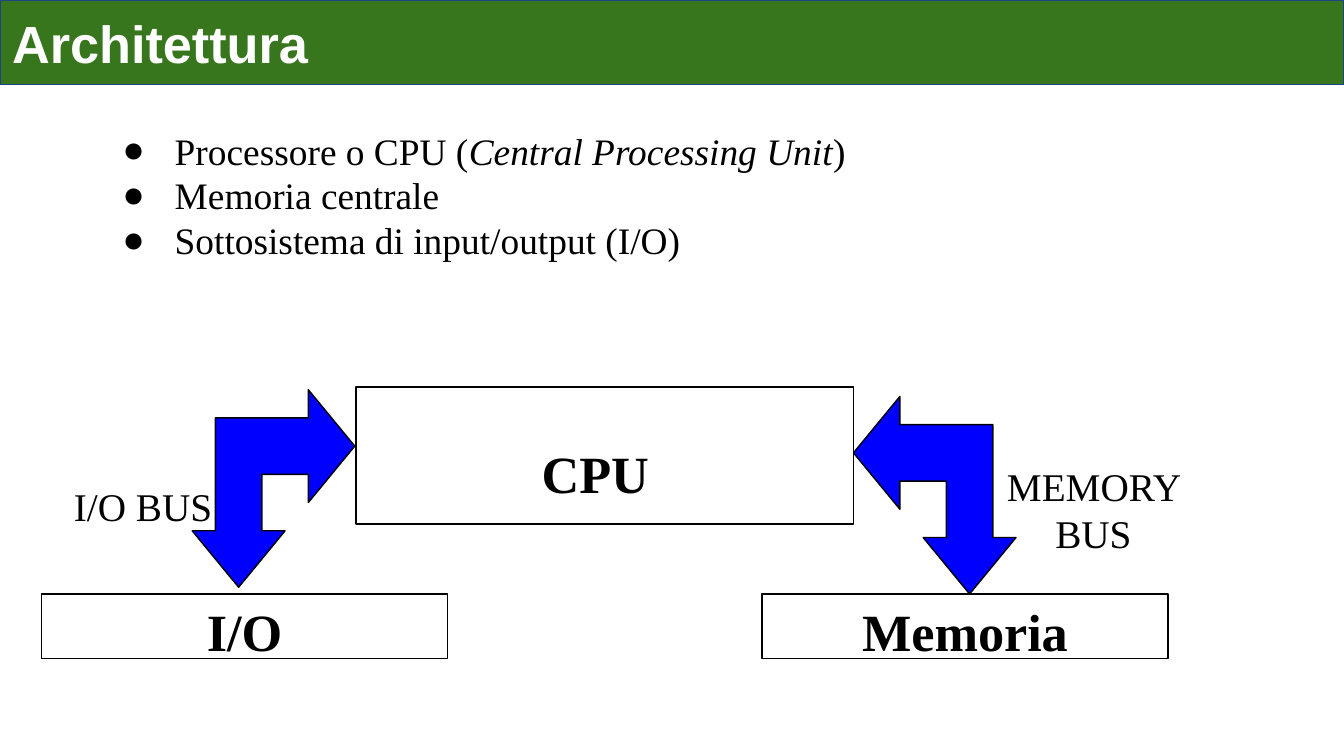
import pptx
import pptx.dml.color
import pptx.enum.shapes
import pptx.enum.text
import pptx.oxml.ns
import pptx.util
from lxml import etree

WIDTH = 10
HEIGHT = WIDTH * 9 / 16
SERIF, SANS = "Times New Roman", "Arial"
BLACK, WHITE, BLUE = "000000", "FFFFFF", "0000FF"
GREEN, NAVY = "38761D", "1C4587"
ALIGN = pptx.enum.text.PP_ALIGN
ANCHOR = pptx.enum.text.MSO_ANCHOR

# Double-headed elbow arrow, on a grid of 7 by 7 cells
ARROW_CELLS = 7
ELBOW = [(7, 2), (5, 4), (5, 3), (3, 3), (3, 5), (4, 5),
         (2, 7), (0, 5), (1, 5), (1, 1), (5, 1), (5, 0)]


def inches(*lengths):
    return [pptx.util.Inches(length) for length in lengths]


def color(hex_text):
    return pptx.dml.color.RGBColor.from_string(hex_text)


def set_all(target, values):
    for name, value in values.items():
        setattr(target, name, value)


def place(element, area):
    set_all(element, dict(zip(("left", "top", "width", "height"), inches(*area))))


def paint(shape, fill=None, line=BLACK):
    """Fill and outline a shape."""
    if fill:
        shape.fill.solid()
        shape.fill.fore_color.rgb = color(fill)
    else:
        shape.fill.background()
    shape.line.color.rgb = color(line)
    shape.line.width = pptx.util.Pt(0.75)


def set_frame(shape, side=0.09, edge=0.04, anchor=ANCHOR.TOP):
    """Fix insets, wrapping and anchor of a text frame."""
    side, edge = inches(side, edge)
    set_all(shape.text_frame, {
        "margin_left": side, "margin_right": side,
        "margin_top": edge, "margin_bottom": edge,
        "word_wrap": True, "vertical_anchor": anchor,
        "auto_size": pptx.enum.text.MSO_AUTO_SIZE.NONE})
    return shape.text_frame


def write(paragraph, text, size, font=SERIF, ink=BLACK, align=ALIGN.LEFT,
          bold=False, italic=False):
    paragraph.alignment = align
    run = paragraph.add_run()
    run.text = text
    set_all(run.font, {"name": font, "size": pptx.util.Pt(size),
                       "bold": bold, "italic": italic})
    run.font.color.rgb = color(ink)


def add_title(slide, text):
    banner = slide.shapes.title
    place(banner, (0, 0, WIDTH, 0.63))
    paint(banner, GREEN, NAVY)
    frame = set_frame(banner, side=0.09, edge=0, anchor=ANCHOR.MIDDLE)
    write(frame.paragraphs[0], text, 28, SANS, WHITE, bold=True)


def add_bullets(slide, items):
    """Each item is a list of (text, italic) parts."""
    components = slide.placeholders[1]
    place(components, (0.71, 0.91, 8.75, 1.52))
    frame = set_frame(components)
    indent, hanging = inches(0.5, -0.39)
    for index, parts in enumerate(items):
        paragraph = frame.add_paragraph() if index else frame.paragraphs[0]
        for text, italic in parts:
            write(paragraph, text, 20, italic=italic)
        set_all(paragraph, {"space_before": pptx.util.Pt(0),
                            "line_spacing": 1.0})
        properties = paragraph._p.get_or_add_pPr()
        properties.set("marL", str(indent))
        properties.set("indent", str(hanging))
        bullet = etree.SubElement(properties, pptx.oxml.ns.qn("a:buChar"))
        bullet.set("char", "●")


def add_unit(slide, area, text=None):
    """Outlined block of the architecture."""
    unit = slide.shapes.add_shape(
        pptx.enum.shapes.MSO_SHAPE.RECTANGLE, *inches(*area))
    unit.shadow.inherit = False
    paint(unit)
    if text:
        write(set_frame(unit).paragraphs[0], text, 28,
              align=ALIGN.CENTER, bold=True)


def add_label(slide, area, text, size=21, **style):
    label = slide.shapes.add_textbox(*inches(*area))
    write(set_frame(label).paragraphs[0], text, size, **style)


def add_bus(slide, left, top, mirrored=False):
    """Elbow arrow between the CPU and a lower block."""
    corners = [(ARROW_CELLS - x if mirrored else x, y) for x, y in ELBOW]
    cell = [length / ARROW_CELLS for length in inches(1.21, 1.47)]
    outline = slide.shapes.build_freeform(*corners[0], scale=tuple(cell))
    outline.add_line_segments(corners[1:], close=True)
    bus = outline.convert_to_shape(*inches(left, top))
    bus.shadow.inherit = False
    paint(bus, BLUE)


def main():
    deck = pptx.Presentation()
    deck.slide_width, deck.slide_height = inches(WIDTH, HEIGHT)
    slide = deck.slides.add_slide(deck.slide_layouts[1])

    # Title and list of components
    add_title(slide, "Architettura")
    add_bullets(slide, [
        [("Processore o CPU (", False), ("Central Processing Unit", True),
         (")", False)],
        [("Memoria centrale", False)],
        [("Sottosistema di input/output (I/O)", False)]])

    # Lower blocks
    for left, name in ((0.31, "I/O"), (5.67, "Memoria")):
        add_unit(slide, (left, 4.42, 3.02, 0.48), name)

    # Buses and their labels
    add_bus(slide, 1.43, 2.9)
    add_bus(slide, 6.35, 2.95, mirrored=True)
    add_label(slide, (0.31, 3.55, 1.51, 0.38), "I/O BUS", align=ALIGN.CENTER)
    add_label(slide, (7.34, 3.4, 1.59, 0.68), "MEMORY BUS", align=ALIGN.CENTER)

    # Processor
    add_unit(slide, (2.65, 2.88, 3.7, 1.02))
    add_label(slide, (3.94, 3.24, 1.28, 0.48), "CPU", size=28, bold=True)

    deck.save("out.pptx")


if __name__ == "__main__":
    main()
